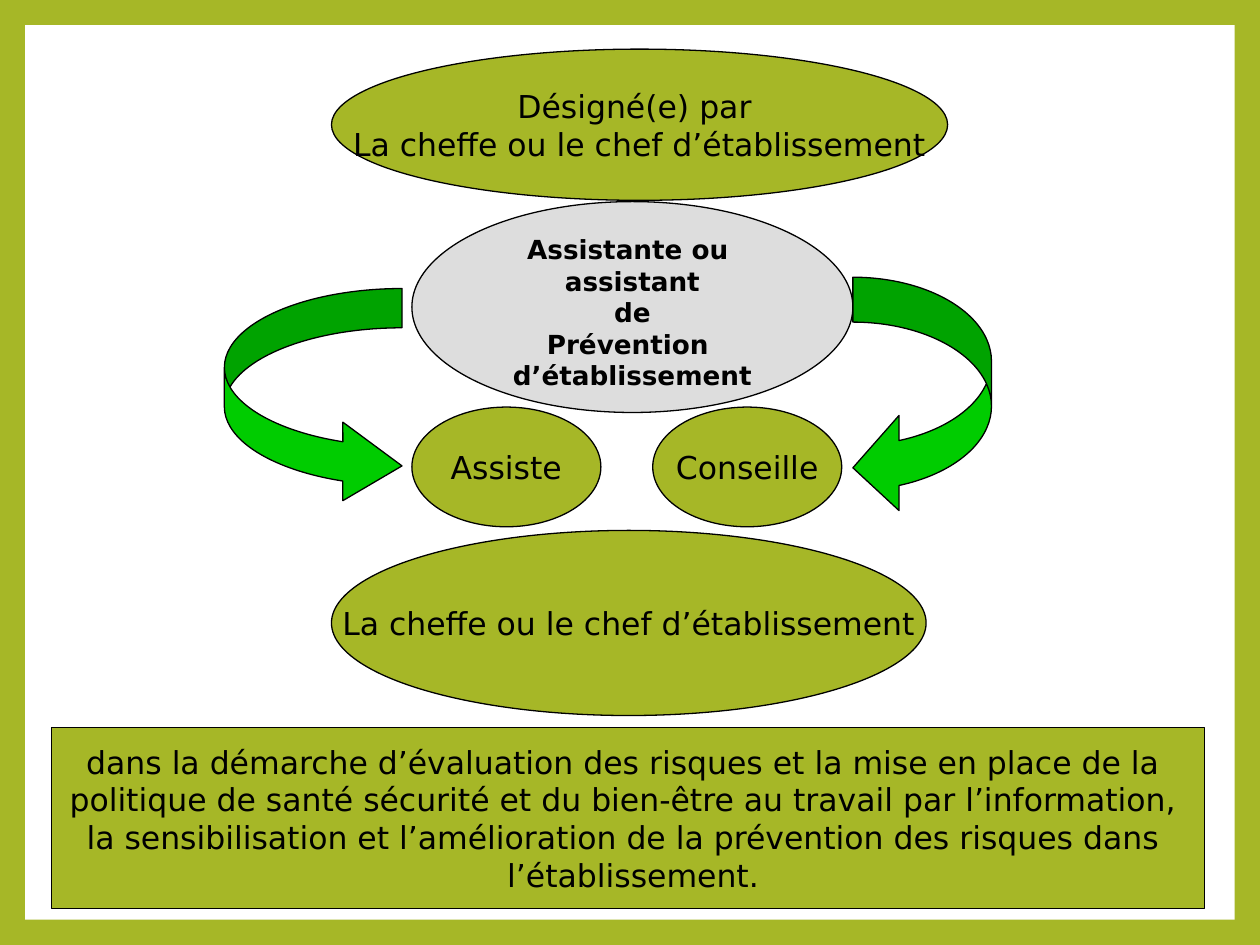
from dataclasses import dataclass

from pptx import Presentation
from pptx.dml.color import RGBColor
from pptx.enum.shapes import MSO_SHAPE
from pptx.enum.text import MSO_ANCHOR, PP_ALIGN
from pptx.slide import Slide
from pptx.util import Pt

CHIEF = "La cheffe ou le chef d’établissement"


def paint(color, value):
    color.rgb = RGBColor.from_string(value)


@dataclass
class Diagram:
    """Draws the styled elements of one slide."""

    page: Slide
    font: str = "DejaVu Sans"
    olive: str = "A6B727"
    green: str = "00CC00"
    ink: str = "000000"

    def background(self):
        fill = self.page.background.fill
        fill.solid()
        paint(fill.fore_color, self.olive)

    def shape(self, kind, place, fill, outlined=True):
        shape = self.page.shapes.add_shape(kind, *map(Pt, place))
        shape.shadow.inherit = False
        shape.fill.solid()
        paint(shape.fill.fore_color, fill)
        if outlined:
            shape.line.width = Pt(0.75)
            paint(shape.line.color, self.ink)
        else:
            shape.line.fill.background()
        return shape

    def label(self, kind, place, lines, fill=None, size=18, bold=False, top=3.6):
        frame = self.shape(kind, place, fill or self.olive).text_frame
        frame.word_wrap = False
        frame.vertical_anchor = MSO_ANCHOR.MIDDLE
        frame.margin_top = Pt(top)
        frame.text = "\n".join(lines)
        for para in frame.paragraphs:
            para.alignment = PP_ALIGN.CENTER
            para.font.name = self.font
            para.font.size = Pt(size)
            para.font.bold = bold
            paint(para.font.color, self.ink)

    def oval(self, place, *lines, **style):
        self.label(MSO_SHAPE.OVAL, place, lines, **style)

    def banner(self, place, *lines):
        self.label(MSO_SHAPE.RECTANGLE, place, lines)

    def arrow(self, kind, place, adjustments):
        arrow = self.shape(kind, place, self.green)
        for index, value in enumerate(adjustments):
            arrow.adjustments[index] = value


def main():
    deck = Presentation()
    deck.slide_width, deck.slide_height = Pt(720), Pt(540)
    diagram = Diagram(deck.slides.add_slide(deck.slide_layouts[6]))
    diagram.background()
    diagram.shape(MSO_SHAPE.RECTANGLE, (14.4, 14.4, 691.2, 511.2), "FFFFFF", outlined=False)

    diagram.oval(
        (235.4, 115.2, 252, 120.5),
        "Assistante ou ", "assistant", "de", "Prévention ", "d’établissement",
        fill="DDDDDD", size=15, bold=True, top=9.4,
    )
    diagram.arrow(MSO_SHAPE.CURVED_RIGHT_ARROW, (128.2, 164.9, 101.5, 123.8), (0.221, 0.442, 0.333))
    diagram.arrow(MSO_SHAPE.CURVED_LEFT_ARROW, (487.4, 158.4, 79.2, 136.1), (0.324, 0.686, 0.333))
    for left, role in ((235.4, "Assiste"), (373, "Conseille")):
        diagram.oval((left, 232.6, 108, 68.4), role)
    diagram.banner(
        (29.5, 415.9, 659, 103.2),
        "dans la démarche d’évaluation des risques et la mise en place de la ",
        "politique de santé sécurité et du bien-être au travail par l’information, ",
        "la sensibilisation et l’amélioration de la prévention des risques dans ",
        " l’établissement.",
    )
    diagram.oval((189.4, 28.1, 352.1, 86.4), "Désigné(e) par ", CHIEF)
    diagram.oval((189.4, 303.1, 339.8, 105.8), CHIEF)
    deck.save("out.pptx")


if __name__ == "__main__":
    main()
